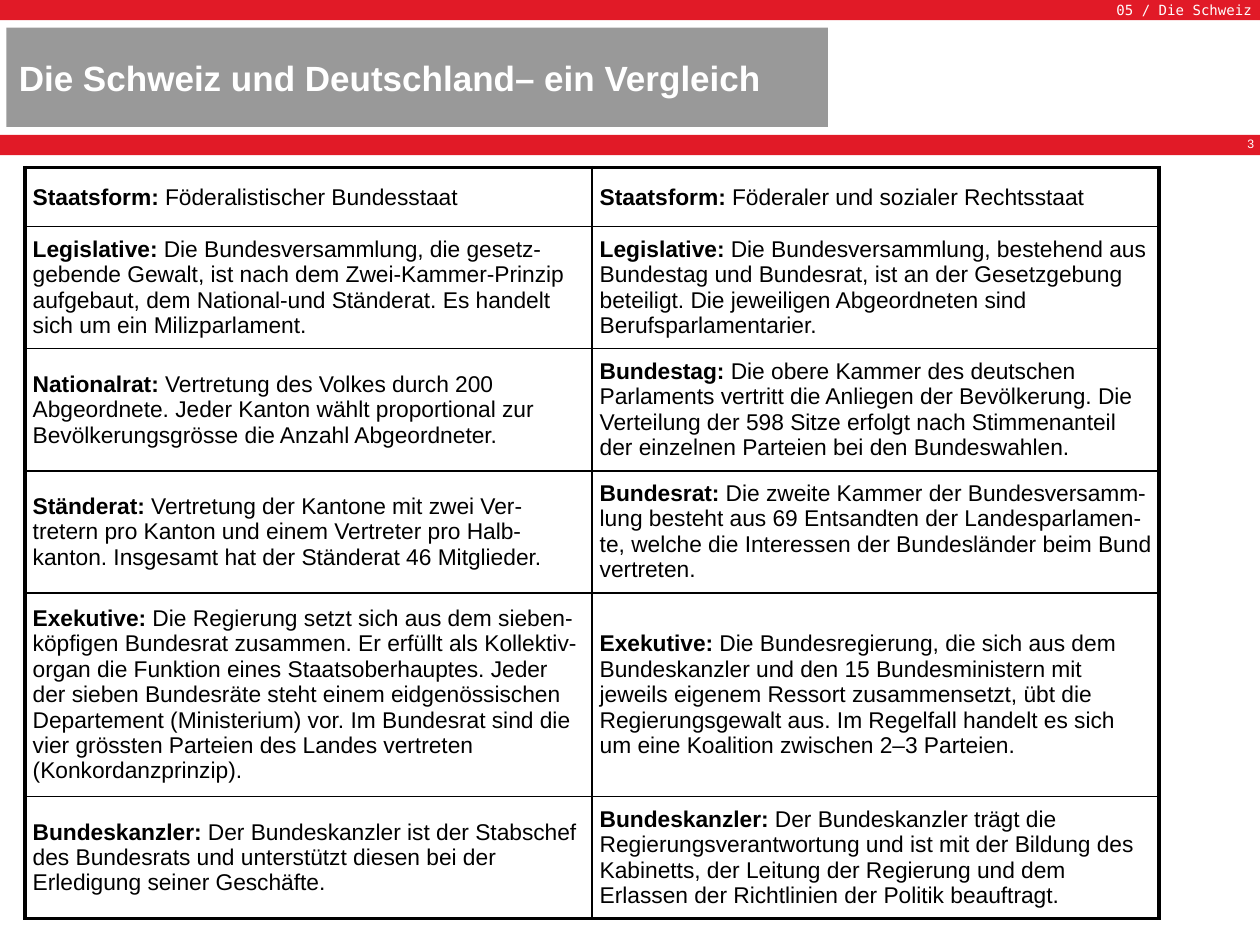
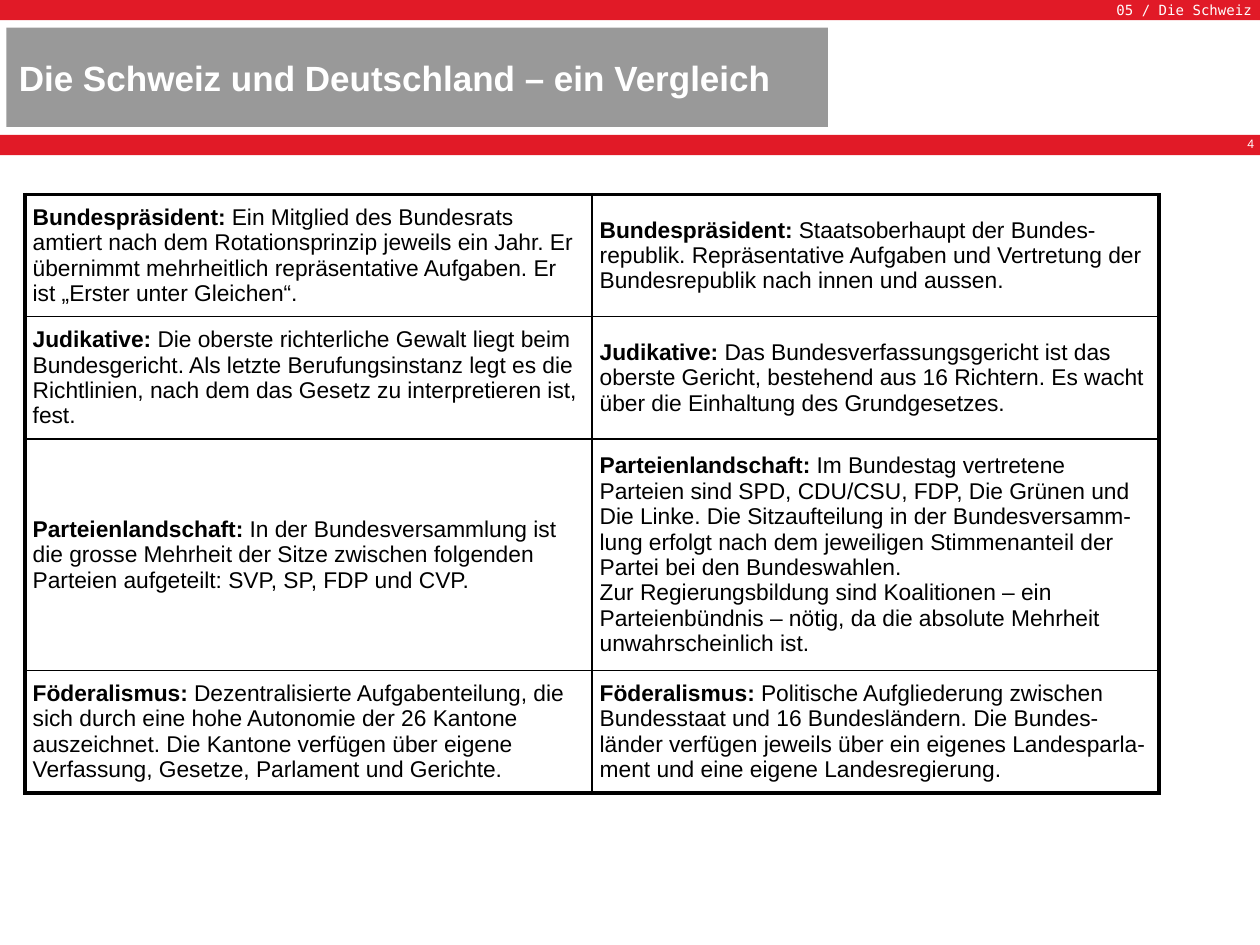
import pptx
import pptx.dml.color
import pptx.enum.shapes
import pptx.enum.text
import pptx.oxml
import pptx.oxml.ns
import pptx.util

Cm = pptx.util.Cm
Pt = pptx.util.Pt
ALIGN = pptx.enum.text.PP_ALIGN
ANCHOR = pptx.enum.text.MSO_ANCHOR

COLORS = {"band": "E11A27", "title": "999999", "light": "FFFFFF", "ink": "000000"}

FONTS = {
    "header": {"name": "DejaVu Sans Mono", "size": Pt(8), "bold": False},
    "title": {"name": "Arial", "size": Pt(20), "bold": True},
    "number": {"name": "Arial", "size": Pt(7), "bold": False},
    "term": {"name": "Arial", "size": Pt(13), "bold": True},
    "body": {"name": "Arial", "size": Pt(13), "bold": False},
}

SLIDE_WIDTH, SLIDE_HEIGHT = Cm(25.4), Cm(19.05)
BAND_HEIGHT = Cm(0.41)
COLUMN_WIDTH = Cm(11.43)
OUTER_LINE, INNER_LINE = Pt(2.25), Pt(1)
CELL_FORMAT = {
    "margin_left": Cm(0.16), "margin_right": Cm(0.16),
    "margin_top": Cm(0.13), "margin_bottom": Cm(0.13),
    "vertical_anchor": ANCHOR.MIDDLE,
}
HEADER_FORMAT = {
    "margin_left": Cm(0.16), "margin_right": Cm(0.16),
    "margin_top": Cm(0.03), "margin_bottom": Cm(0.03),
    "vertical_anchor": ANCHOR.TOP, "word_wrap": True,
}

# Each row: height in cm, then (term, text paragraphs) for Switzerland and Germany
COMPARISONS = [
    {
        "title": "Die Schweiz und Deutschland– ein Vergleich",
        "number": "3",
        "top": 3.38,
        "rows": [
            (1.19,
             ("Staatsform:", ["Föderalistischer Bundesstaat"]),
             ("Staatsform:", ["Föderaler und sozialer Rechtsstaat"])),
            (2.46,
             ("Legislative:", [
                 "Die Bundesversammlung, die gesetz-gebende Gewalt, ist nach dem "
                 "Zwei-Kammer-Prinzip aufgebaut, dem National-und Ständerat. "
                 "Es handelt sich um ein Milizparlament."]),
             ("Legislative:", [
                 "Die Bundesversammlung, bestehend aus Bundestag und Bundesrat, ist an "
                 "der Gesetzgebung beteiligt. Die jeweiligen Abgeordneten sind "
                 "Berufsparlamentarier."])),
            (2.46,
             ("Nationalrat:", [
                 "Vertretung des Volkes durch 200 Abgeordnete. Jeder Kanton wählt "
                 "proportional zur Bevölkerungsgrösse die Anzahl Abgeordneter."]),
             ("Bundestag:", [
                 "Die obere Kammer des deutschen Parlaments vertritt die Anliegen der "
                 "Bevölkerung. Die Verteilung der 598 Sitze erfolgt nach Stimmenanteil "
                 "der einzelnen Parteien bei den Bundeswahlen."])),
            (2.46,
             ("Ständerat:", [
                 "Vertretung der Kantone mit zwei Ver-tretern pro Kanton und einem "
                 "Vertreter pro Halb-kanton. Insgesamt hat der Ständerat 46 Mitglieder."]),
             ("Bundesrat:", [
                 "Die zweite Kammer der Bundesversamm-lung besteht aus 69 Entsandten der "
                 "Landesparlamen-te, welche die Interessen der Bundesländer beim Bund "
                 "vertreten."])),
            (4.11,
             ("Exekutive:", [
                 "Die Regierung setzt sich aus dem sieben-köpfigen Bundesrat zusammen. "
                 "Er erfüllt als Kollektiv-organ die Funktion eines Staatsoberhauptes. "
                 "Jeder der sieben Bundesräte steht einem eidgenössischen Departement "
                 "(Ministerium) vor. Im Bundesrat sind die vier grössten Parteien des "
                 "Landes vertreten (Konkordanzprinzip)."]),
             ("Exekutive:", [
                 "Die Bundesregierung, die sich aus dem Bundeskanzler und den 15 "
                 "Bundesministern mit jeweils eigenem Ressort zusammensetzt, übt die "
                 "Regierungsgewalt aus. Im Regelfall handelt es sich um eine Koalition "
                 "zwischen 2–3 Parteien."])),
            (2.46,
             ("Bundeskanzler:", [
                 "Der Bundeskanzler ist der Stabschef des Bundesrats und unterstützt "
                 "diesen bei der Erledigung seiner Geschäfte."]),
             ("Bundeskanzler:", [
                 "Der Bundeskanzler trägt die Regierungsverantwortung und ist mit der "
                 "Bildung des Kabinetts, der Leitung der Regierung und dem Erlassen der "
                 "Richtlinien der Politik beauftragt."])),
        ],
    },
    {
        "title": "Die Schweiz und Deutschland – ein Vergleich",
        "number": "4",
        "top": 3.92,
        "rows": [
            (2.46,
             ("Bundespräsident:", [
                 "Ein Mitglied des Bundesrats amtiert nach dem Rotationsprinzip jeweils "
                 "ein Jahr. Er übernimmt mehrheitlich repräsentative Aufgaben. Er ist "
                 "„Erster unter Gleichen“."]),
             ("Bundespräsident:", [
                 "Staatsoberhaupt der Bundes-republik. Repräsentative Aufgaben und "
                 "Vertretung der Bundesrepublik nach innen und aussen."])),
            (2.46,
             ("Judikative:", [
                 "Die oberste richterliche Gewalt liegt beim Bundesgericht. Als letzte "
                 "Berufungsinstanz legt es die Richtlinien, nach dem das Gesetz zu "
                 "interpretieren ist, fest."]),
             ("Judikative:", [
                 "Das Bundesverfassungsgericht ist das oberste Gericht, bestehend aus 16 "
                 "Richtern. Es wacht über die Einhaltung des Grundgesetzes."])),
            (4.66,
             ("Parteienlandschaft:", [
                 "In der Bundesversammlung ist die grosse Mehrheit der Sitze zwischen "
                 "folgenden Parteien aufgeteilt: SVP, SP, FDP und CVP."]),
             ("Parteienlandschaft:", [
                 "Im Bundestag vertretene Parteien sind SPD, CDU/CSU, FDP, Die Grünen und "
                 "Die Linke. Die Sitzaufteilung in der Bundesversamm-lung erfolgt nach "
                 "dem jeweiligen Stimmenanteil der Partei bei den Bundeswahlen.",
                 "Zur Regierungsbildung sind Koalitionen – ein Parteienbündnis – nötig, "
                 "da die absolute Mehrheit unwahrscheinlich ist."])),
            (2.46,
             ("Föderalismus:", [
                 "Dezentralisierte Aufgabenteilung, die sich durch eine hohe Autonomie "
                 "der 26 Kantone auszeichnet. Die Kantone verfügen über eigene "
                 "Verfassung, Gesetze, Parlament und Gerichte."]),
             ("Föderalismus:", [
                 "Politische Aufgliederung zwischen Bundesstaat und 16 Bundesländern. "
                 "Die Bundes-länder verfügen jeweils über ein eigenes Landesparla-ment "
                 "und eine eigene Landesregierung."])),
        ],
    },
]


def add_run(paragraph, text, font_name, color):
    run = paragraph.add_run()
    run.text = text
    for attribute, value in FONTS[font_name].items():
        setattr(run.font, attribute, value)
    run.font.color.rgb = pptx.dml.color.RGBColor.from_string(COLORS[color])


def add_rectangle(slide, left, top, width, height, color):
    shape = slide.shapes.add_shape(
        pptx.enum.shapes.MSO_SHAPE.RECTANGLE, left, top, width, height)
    shape.shadow.inherit = False
    shape.fill.solid()
    shape.fill.fore_color.rgb = pptx.dml.color.RGBColor.from_string(COLORS[color])
    shape.line.fill.background()
    return shape


presentation = pptx.Presentation()
presentation.slide_width = SLIDE_WIDTH
presentation.slide_height = SLIDE_HEIGHT

for comparison in COMPARISONS:
    slide = presentation.slides.add_slide(presentation.slide_layouts[6])

    # Red bands, the upper one with the chapter name
    header = add_rectangle(slide, 0, 0, SLIDE_WIDTH, BAND_HEIGHT, "band")
    add_rectangle(slide, 0, Cm(2.72), SLIDE_WIDTH, BAND_HEIGHT, "band")
    for attribute, value in HEADER_FORMAT.items():
        setattr(header.text_frame, attribute, value)
    paragraph = header.text_frame.paragraphs[0]
    paragraph.alignment = ALIGN.RIGHT
    add_run(paragraph, "05 / Die Schweiz", "header", "light")

    # Title on grey
    title = add_rectangle(slide, Cm(0.13), Cm(0.56), Cm(16.56), Cm(2), "title")
    title.text_frame.word_wrap = True
    title.text_frame.vertical_anchor = ANCHOR.MIDDLE
    paragraph = title.text_frame.paragraphs[0]
    paragraph.alignment = ALIGN.LEFT
    add_run(paragraph, comparison["title"], "title", "light")

    # Comparison table
    rows = comparison["rows"]
    total_height = Cm(sum(row[0] for row in rows))
    table = slide.shapes.add_table(
        len(rows), 2, Cm(0.5), Cm(comparison["top"]), 2 * COLUMN_WIDTH, total_height).table
    table.first_row = False
    table.horz_banding = False
    for column in table.columns:
        column.width = COLUMN_WIDTH

    for row_index, (height, *entries) in enumerate(rows):
        table.rows[row_index].height = Cm(height)
        for column_index, (term, texts) in enumerate(entries):
            cell = table.cell(row_index, column_index)
            for attribute, value in CELL_FORMAT.items():
                setattr(cell, attribute, value)

            # Heavy lines around the table, thin ones inside
            is_outer = {
                "lnL": column_index == 0,
                "lnR": column_index == 1,
                "lnT": row_index == 0,
                "lnB": row_index == len(rows) - 1,
            }
            properties = cell._tc.get_or_add_tcPr()
            for side, outer in is_outer.items():
                line_width = OUTER_LINE if outer else INNER_LINE
                properties.append(pptx.oxml.parse_xml(
                    f'<a:{side} {pptx.oxml.ns.nsdecls("a")} w="{int(line_width)}">'
                    f'<a:solidFill><a:srgbClr val="{COLORS["ink"]}"/></a:solidFill>'
                    f'</a:{side}>'))
            cell.fill.background()

            # Bold term, then the text
            paragraph = cell.text_frame.paragraphs[0]
            add_run(paragraph, term, "term", "ink")
            add_run(paragraph, " " + texts[0], "body", "ink")
            for text in texts[1:]:
                add_run(cell.text_frame.add_paragraph(), text, "body", "ink")

    # Slide number on the lower band
    number = slide.shapes.add_textbox(Cm(19.61), Cm(2.62), Cm(5.92), Cm(1.32))
    number.text_frame.word_wrap = True
    paragraph = number.text_frame.paragraphs[0]
    paragraph.alignment = ALIGN.RIGHT
    add_run(paragraph, comparison["number"], "number", "light")

presentation.save("out.pptx")
